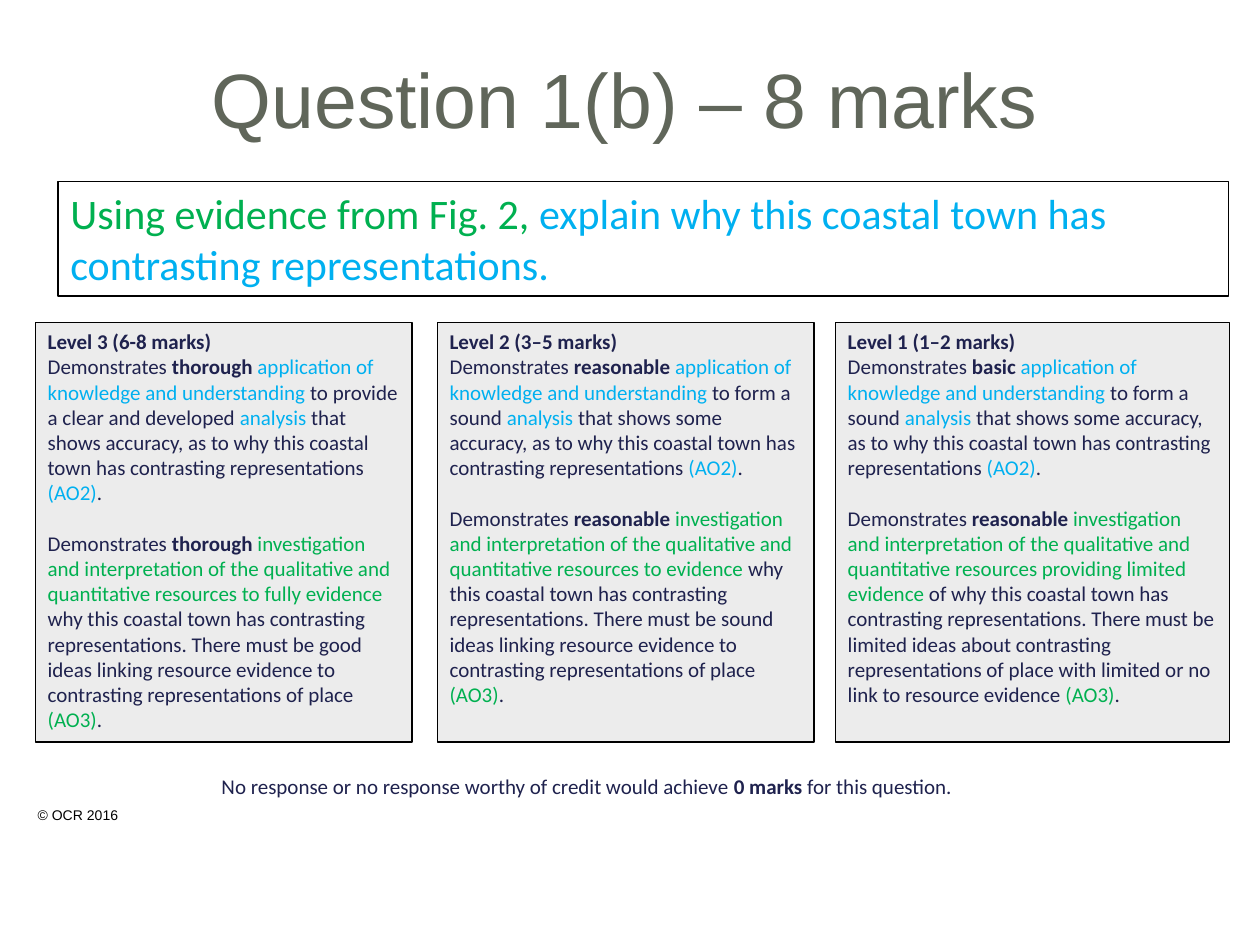
from pptx import Presentation
from pptx.dml.color import RGBColor
from pptx.enum.shapes import MSO_SHAPE
from pptx.enum.text import MSO_ANCHOR, PP_ALIGN
from pptx.util import Inches, Pt

INK = {"title": "60665A", "text": "1F224E", "bold": "1F224E", "know": "00B0F0",
       "proof": "00B050", "fill": "ECECEC", "line": "000000"}
SKILL = "application of knowledge and understanding "
STUDY = "investigation and interpretation of the qualitative and quantitative resources "
TOWN = "why this coastal town has contrasting representations"
LEVELS = [
    (0.28, 2.99, "Level 3 (6-8 marks)", "thorough ", "thorough ",
     "to provide a clear and developed ", f"that shows accuracy, as to {TOWN} ",
     "to fully evidence ", f"{TOWN}. There must be good ideas linking resource evidence "
     "to contrasting representations of place "),
    (3.47, 2.99, "Level 2 (3–5 marks)", "reasonable ", "reasonable ",
     "to form a sound ", f"that shows some accuracy, as to {TOWN} ",
     "to evidence ", f"{TOWN}. There must be sound ideas linking resource evidence "
     "to contrasting representations of place "),
    (6.63, 3.13, "Level 1 (1–2 marks)", "basic ", "reasonable ",
     "to form a sound ", f"that shows some accuracy, as to {TOWN} ",
     "providing limited evidence ", f"of {TOWN}. There must be limited ideas about "
     "contrasting representations of place with limited or no link to resource evidence "),
]


def tint(name):
    """Return the named colour."""
    return RGBColor.from_string(INK[name])


def style(para, size, face):
    """Set the size and typeface of a paragraph."""
    para.font.size = Pt(size)
    para.font.name = face


def write(frame, paras, size, face="Calibri"):
    """Fill a text frame with paragraphs of (colour, text) runs."""
    frame.word_wrap = True
    frame.vertical_anchor = MSO_ANCHOR.TOP
    for i, runs in enumerate(paras):
        para = frame.add_paragraph() if i else frame.paragraphs[0]
        para.alignment = PP_ALIGN.LEFT
        style(para, size, face)
        for kind, text in runs:
            run = para.add_run()
            run.text = text
            run.font.color.rgb = tint(kind)
            run.font.bold = kind == "bold"


def panel(slide, area, paras, size, fill=None):
    """Add an outlined text panel."""
    box = slide.shapes.add_shape(MSO_SHAPE.RECTANGLE, *map(Inches, area))
    box.shadow.inherit = False
    if fill:
        box.fill.solid()
        box.fill.fore_color.rgb = tint(fill)
    else:
        box.fill.background()
    box.line.color.rgb = tint("line")
    box.line.width = Pt(0.75)
    write(box.text_frame, paras, size)
    return box


def note(slide, area, runs, size, face="Calibri"):
    """Add one line of plain text."""
    box = slide.shapes.add_textbox(*map(Inches, area))
    write(box.text_frame, [runs], size, face)


def head(slide, text):
    """Place and format the title."""
    title = slide.shapes.title
    title.left, title.top, title.width, title.height = map(Inches, (0.46, 0.15, 9, 1.25))
    title.text_frame.text = text
    title.text_frame.vertical_anchor = MSO_ANCHOR.MIDDLE
    para = title.text_frame.paragraphs[0]
    para.alignment = PP_ALIGN.CENTER
    style(para, 44, "Arial")
    para.font.color.rgb = tint("title")


def level(slide, left, width, name, grade, rank, aim, scope, use, ideas):
    """Add the panel for one mark level."""
    paras = [
        [("bold", name)],
        [("text", "Demonstrates "), ("bold", grade), ("know", SKILL), ("text", aim),
         ("know", "analysis "), ("text", scope), ("know", "(AO2)"), ("text", ".")],
        [("text", "Demonstrates "), ("bold", rank), ("proof", STUDY + use),
         ("text", ideas), ("proof", "(AO3)"), ("text", ".")],
    ]
    box = panel(slide, (left, 2.56, width, 3.33), paras, 12, "fill")
    box.text_frame.paragraphs[-1].space_before = Pt(14.4)


def main():
    """Build and save the slide."""
    deck = Presentation()
    deck.slide_width, deck.slide_height = Inches(10), Inches(7.5)
    slide = deck.slides.add_slide(deck.slide_layouts[5])
    head(slide, "Question 1(b) – 8 marks")
    task = [("proof", "Using evidence from Fig. 2, "), ("know", f"explain {TOWN}.")]
    panel(slide, (0.46, 1.44, 9.29, 0.91), [task], 24)
    for row in LEVELS:
        level(slide, *row)
    note(slide, (1.66, 6.09, 6.54, 0.3),
         [("text", "No response or no response worthy of credit would achieve "),
          ("bold", "0 marks "), ("text", "for this question.")], 12)
    note(slide, (0.2, 6.35, 1.89, 0.24), [("line", "© OCR 2016")], 8, "Arial")
    deck.save("out.pptx")


if __name__ == "__main__":
    main()
